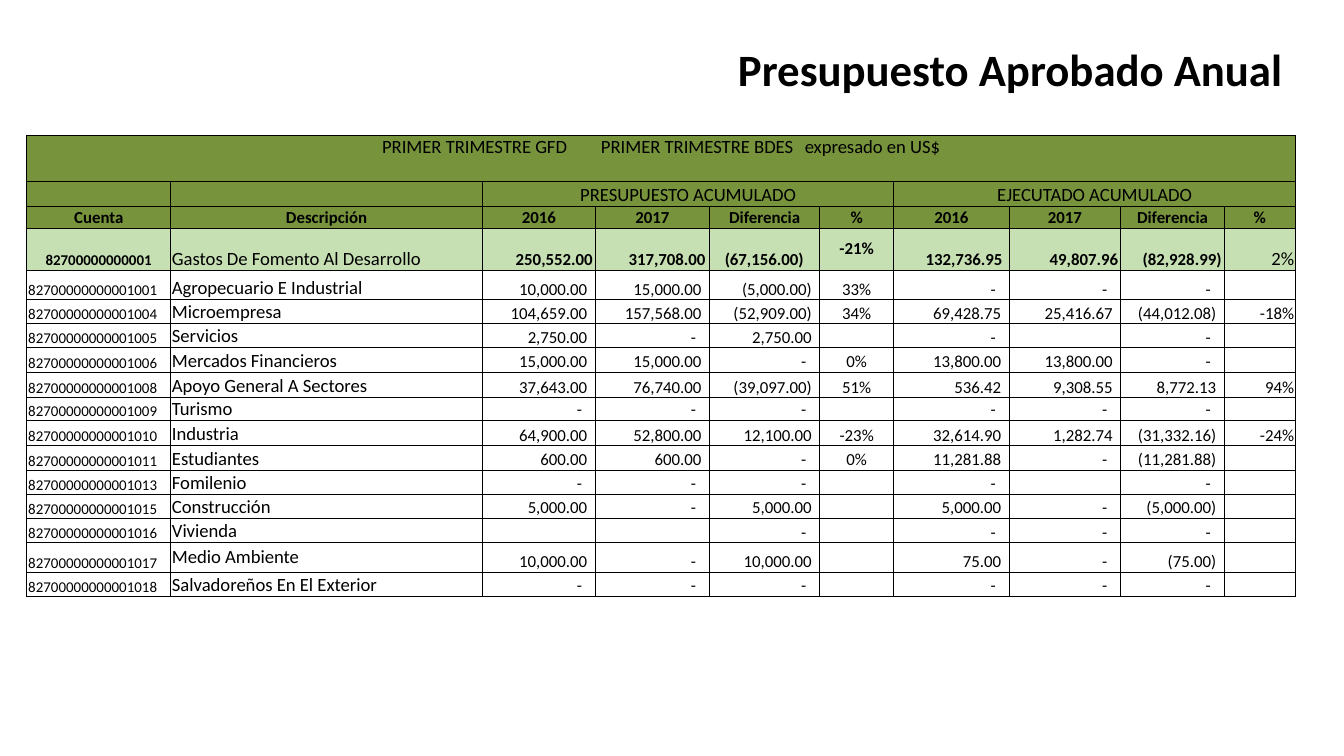
from typing import NamedTuple

from lxml.etree import SubElement
from pptx import Presentation
from pptx.dml.color import RGBColor
from pptx.enum.text import MSO_ANCHOR, PP_ALIGN
from pptx.oxml.ns import qn
from pptx.util import Inches, Pt

FONT = "Calibri"
BLACK, OLIVE, PALE_GREEN = "000000", "77933C", "C6E0B4"
COLUMN_WIDTHS = [1.07, 2.32, 0.84, 0.85, 0.82, 0.55, 0.86, 0.83, 0.77, 0.53]
ROW_HEIGHTS = [0.34, 0.19, 0.16, 0.31, 0.22, 0.18, 0.18, 0.18, 0.19,
               0.17, 0.19, 0.18, 0.18, 0.18, 0.18, 0.22, 0.18]
BUDGET_PERCENT, SPENT_PERCENT = 5, 9
MEASURES = ["2016", "2017", "Diferencia", "%"]
HEADINGS = ["Cuenta", "Descripción"] + MEASURES * 2
TOTAL_MARGINS = {3: 0.03, 4: 0.12, 6: 0.05}


class Style(NamedTuple):
    size: float = 9
    bold: bool = False
    align: PP_ALIGN = PP_ALIGN.LEFT
    anchor: MSO_ANCHOR = MSO_ANCHOR.BOTTOM
    right: float = 0.01


class Account(NamedTuple):
    code: str
    name: str
    budget: tuple[str, str, str, str]
    spent: tuple[str, str, str, str]


TOTAL = Account("82700000000001", "Gastos De Fomento Al Desarrollo",
                ("250,552.00", "317,708.00", "(67,156.00)", "-21%"),
                ("132,736.95", "49,807.96", "(82,928.99)", "2%"))
ACCOUNTS = [
    Account("82700000000001001", "Agropecuario E Industrial",
            ("10,000.00", "15,000.00", "(5,000.00)", "33%"), ("-", "-", "-", "")),
    Account("82700000000001004", "Microempresa",
            ("104,659.00", "157,568.00", "(52,909.00)", "34%"),
            ("69,428.75", "25,416.67", "(44,012.08)", "-18%")),
    Account("82700000000001005", "Servicios",
            ("2,750.00", "-", "2,750.00", ""), ("-", "", "-", "")),
    Account("82700000000001006", "Mercados Financieros",
            ("15,000.00", "15,000.00", "-", "0%"), ("13,800.00", "13,800.00", "-", "")),
    Account("82700000000001008", "Apoyo General A Sectores",
            ("37,643.00", "76,740.00", "(39,097.00)", "51%"),
            ("536.42", "9,308.55", "8,772.13", "94%")),
    Account("82700000000001009", "Turismo",
            ("-", "-", "-", ""), ("-", "-", "-", "")),
    Account("82700000000001010", "Industria",
            ("64,900.00", "52,800.00", "12,100.00", "-23%"),
            ("32,614.90", "1,282.74", "(31,332.16)", "-24%")),
    Account("82700000000001011", "Estudiantes",
            ("600.00", "600.00", "-", "0%"), ("11,281.88", "-", "(11,281.88)", "")),
    Account("82700000000001013", "Fomilenio",
            ("-", "-", "-", ""), ("-", "", "-", "")),
    Account("82700000000001015", "Construcción",
            ("5,000.00", "-", "5,000.00", ""), ("5,000.00", "-", "(5,000.00)", "")),
    Account("82700000000001016", "Vivienda",
            ("", "", "-", ""), ("-", "-", "-", "")),
    Account("82700000000001017", "Medio Ambiente",
            ("10,000.00", "-", "10,000.00", ""), ("75.00", "-", "(75.00)", "")),
    Account("82700000000001018", "Salvadoreños En El Exterior",
            ("-", "-", "-", ""), ("-", "-", "-", "")),
]


def color(value: str) -> RGBColor:
    return RGBColor.from_string(value)


def format_spans(para, style: Style) -> None:
    para.alignment = style.align
    for span in para.runs:
        span.font.name = FONT
        span.font.size = Pt(style.size)
        span.font.bold = style.bold
        span.font.color.rgb = color(BLACK)


def write(para, text: str, style: Style) -> None:
    if text:
        para.text = text
    else:
        # An empty cell needs a small font so its row stays low
        SubElement(para._p, qn("a:endParaRPr"), sz=str(int(style.size * 100)))
    format_spans(para, style)


def add_borders(cell) -> None:
    properties = cell._tc.get_or_add_tcPr()
    for side in ("lnL", "lnR", "lnT", "lnB"):
        line = SubElement(properties, qn(f"a:{side}"), w=str(Pt(0.5)))
        fill = SubElement(line, qn("a:solidFill"))
        SubElement(fill, qn("a:srgbClr"), val=BLACK)


def fill_cell(cell, text: str, style: Style) -> None:
    cell.margin_left, cell.margin_right = Inches(0.01), Inches(style.right)
    cell.margin_top = cell.margin_bottom = 0
    cell.vertical_anchor = style.anchor
    write(cell.text_frame.paragraphs[0], text, style)


def account_style(column: int, text: str, account: Account) -> Style:
    is_total = account is TOTAL
    if column == 0:
        return Style(8, is_total, PP_ALIGN.CENTER if is_total else PP_ALIGN.LEFT)
    if column == 1:
        middle = account.name == "Medio Ambiente"
        return Style(10, anchor=MSO_ANCHOR.MIDDLE if middle else MSO_ANCHOR.BOTTOM)
    if column == BUDGET_PERCENT:
        return Style(9, is_total, PP_ALIGN.CENTER,
                     MSO_ANCHOR.MIDDLE if is_total else MSO_ANCHOR.BOTTOM)
    if column == SPENT_PERCENT:
        return Style(10 if is_total else 9, align=PP_ALIGN.RIGHT)
    if is_total:
        margin = TOTAL_MARGINS.get(column, 0.02)
    else:
        margin = 0.1 if text == "-" else 0.06
    return Style(9, is_total, PP_ALIGN.RIGHT, right=margin)


def add_title(page) -> None:
    box = page.shapes.add_textbox(Inches(0.5), Inches(0.23), Inches(9.14), Inches(0.56))
    box.text_frame.word_wrap = True
    box.text_frame.vertical_anchor = MSO_ANCHOR.MIDDLE
    write(box.text_frame.paragraphs[0], "Presupuesto Aprobado Anual",
          Style(24, True, PP_ALIGN.RIGHT))


def add_period_band(table) -> None:
    band = table.cell(0, 0)
    band.merge(table.cell(0, 9))
    style = Style(10, align=PP_ALIGN.CENTER, anchor=MSO_ANCHOR.TOP)
    fill_cell(band, "PRIMER TRIMESTRE GFD", style)
    para = band.text_frame.paragraphs[0]
    # One widened space separates each part from the one before
    for gap, text in ((16, "PRIMER TRIMESTRE BDES"), (4, "expresado en US$")):
        space = para.add_run()
        space.text = " "
        space.font._element.set("spc", str(gap * 100))
        para.add_run().text = text
    format_spans(para, style)


def add_budget_table(page) -> None:
    frame = page.shapes.add_table(
        len(ROW_HEIGHTS), len(COLUMN_WIDTHS), Inches(0.2), Inches(1.01),
        Inches(sum(COLUMN_WIDTHS)), Inches(sum(ROW_HEIGHTS)))
    table = frame.table
    table.first_row = table.horz_banding = False
    for column, width in zip(table.columns, COLUMN_WIDTHS):
        column.width = Inches(width)
    for row, height in zip(table.rows, ROW_HEIGHTS):
        row.height = Inches(height)

    # Borders and row colours
    row_fills = [OLIVE] * 3 + [PALE_GREEN]
    for index, row in enumerate(table.rows):
        for cell in row.cells:
            add_borders(cell)
            if index < len(row_fills):
                cell.fill.solid()
                cell.fill.fore_color.rgb = color(row_fills[index])
            else:
                cell.fill.background()

    add_period_band(table)

    # Group headings
    for column in (0, 1):
        fill_cell(table.cell(1, column), "", Style())
    for column, text in ((2, "PRESUPUESTO ACUMULADO"), (6, "EJECUTADO ACUMULADO")):
        group = table.cell(1, column)
        group.merge(table.cell(1, column + 3))
        fill_cell(group, text, Style(10, align=PP_ALIGN.CENTER))

    # Column headings
    for column, text in enumerate(HEADINGS):
        anchor = MSO_ANCHOR.MIDDLE if column < 2 else MSO_ANCHOR.BOTTOM
        fill_cell(table.cell(2, column), text, Style(9, True, PP_ALIGN.CENTER, anchor))

    # Total and accounts
    for row, account in enumerate([TOTAL] + ACCOUNTS, start=3):
        texts = (account.code, account.name, *account.budget, *account.spent)
        for column, text in enumerate(texts):
            fill_cell(table.cell(row, column), text, account_style(column, text, account))


def main() -> None:
    deck = Presentation()
    deck.slide_width = Inches(10)
    deck.slide_height = deck.slide_width * 9 // 16
    page = deck.slides.add_slide(deck.slide_layouts[6])
    add_title(page)
    add_budget_table(page)
    deck.save("out.pptx")


if __name__ == "__main__":
    main()
